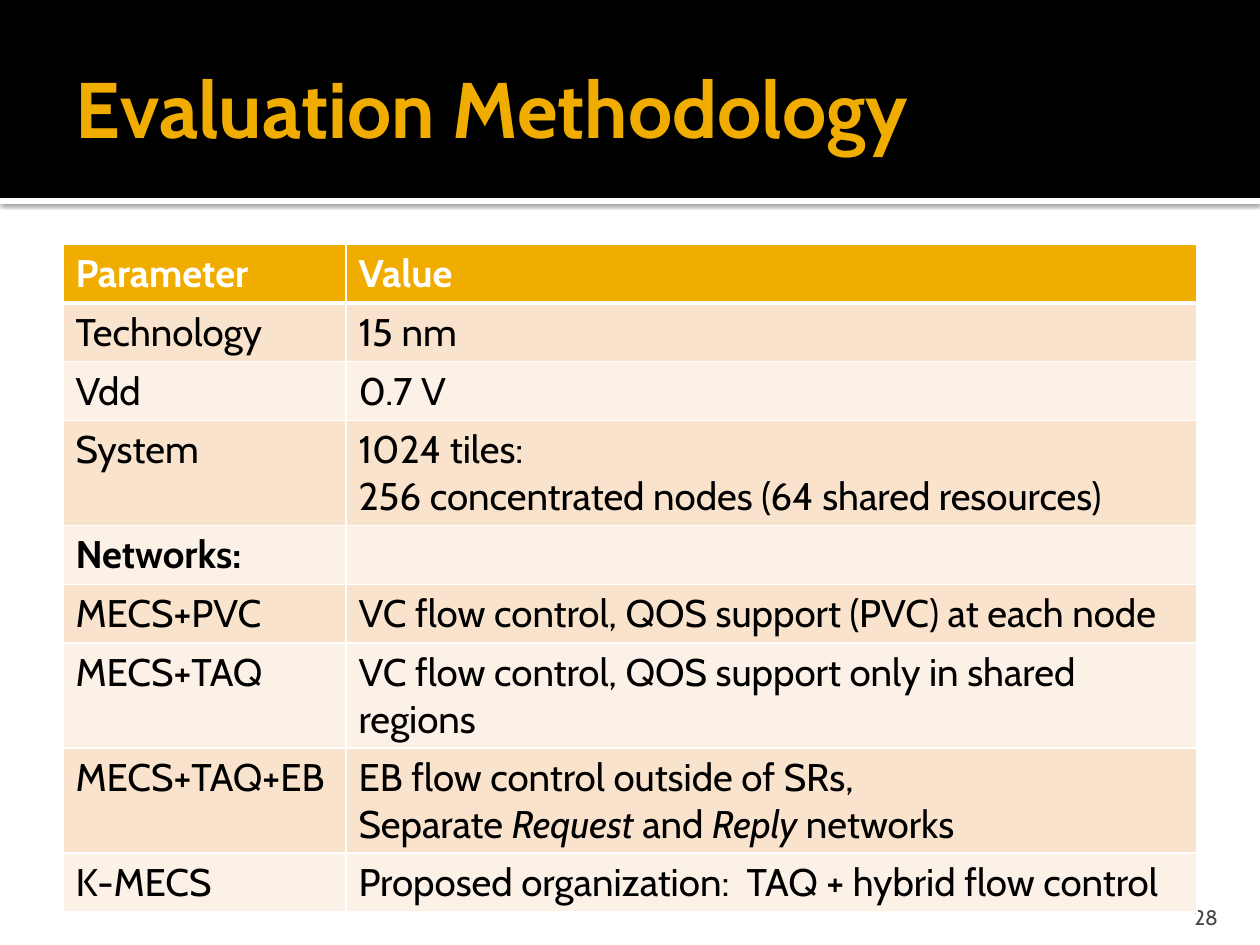
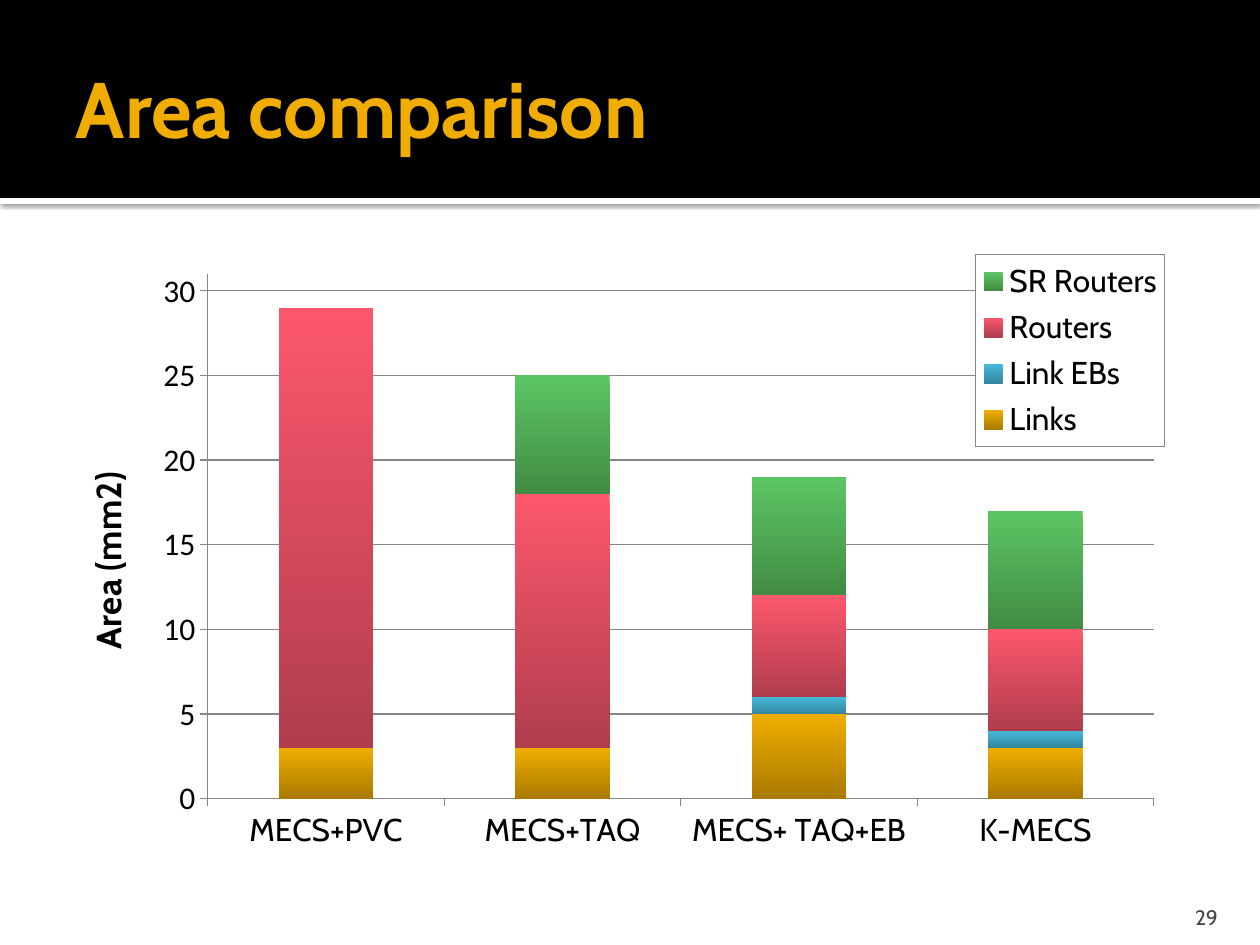
from lxml import etree
from pptx import Presentation
from pptx.chart.data import CategoryChartData
from pptx.dml.color import RGBColor
from pptx.enum.chart import XL_CHART_TYPE as ChartType
from pptx.enum.chart import XL_LEGEND_POSITION as LegendPosition
from pptx.enum.chart import XL_TICK_MARK as TickMark
from pptx.enum.shapes import MSO_SHAPE as Shape
from pptx.enum.text import MSO_ANCHOR as Anchor
from pptx.enum.text import PP_ALIGN as Align
from pptx.oxml import parse_xml
from pptx.oxml.ns import nsdecls, qn
from pptx.util import Pt

PX = 914400 / 126
SLIDE_WIDTH, SLIDE_HEIGHT = 1260, 945
FONT = "Cabin"
GOLD, BLACK, WHITE, GREY = "F0AD00", "000000", "FFFFFF", "454545"
ROW_FILLS = ("FCF1E7", "F9E3CC")
AXIS_GREY = "868686"

# Lines are separated by a line break; *stars* mark italics
PARAMETERS = [
    ("Parameter", "Value"),
    ("Technology", "15 nm"),
    ("Vdd", "0.7 V"),
    ("System", "1024 tiles:\n256 concentrated nodes (64 shared resources)"),
    ("Networks:", ""),
    ("MECS+PVC", "VC flow control, QOS support (PVC) at each node"),
    ("MECS+TAQ", "VC flow control, QOS support only in shared regions"),
    ("MECS+TAQ+EB", "EB flow control outside of SRs,\n"
                    "Separate *Request* and *Reply* networks"),
    ("K-MECS", "Proposed organization:  TAQ + hybrid flow control"),
]
BOLD_CELLS = ("Parameter", "Value", "Networks:")

NETWORKS = ["MECS+PVC", "MECS+TAQ", "MECS+ TAQ+EB", "K-MECS"]
# Series name, areas, gradient from top to bottom
AREAS = [
    ("Links", (3, 3, 5, 3), ("F0AD00", "AA7A00")),
    ("Link EBs", (0, 0, 1, 1), ("45B9DA", "3486A0")),
    ("Routers", (26, 15, 6, 6), ("FC576D", "B03D4D")),
    ("SR Routers", (0, 7, 7, 7), ("5CC563", "428C44")),
]


def px(*lengths):
    return [round(length * PX) for length in lengths]


def rgb(color):
    return RGBColor.from_string(color)


def style_font(font, size, color=BLACK, bold=False, name=FONT):
    font.name, font.size, font.bold = name, Pt(size), bold
    font.color.rgb = rgb(color)


def add_band(slide, box, color):
    band = slide.shapes.add_shape(Shape.RECTANGLE, *px(*box))
    band.shadow.inherit = False
    band.fill.solid()
    band.fill.fore_color.rgb = rgb(color)
    band.line.fill.background()
    return band


def add_text(slide, box, text, size, color, anchor, margins, bold=False, align=Align.LEFT):
    frame = slide.shapes.add_textbox(*px(*box)).text_frame
    frame.word_wrap = True
    frame.vertical_anchor = anchor
    (frame.margin_left, frame.margin_top,
     frame.margin_right, frame.margin_bottom) = px(*margins)
    paragraph = frame.paragraphs[0]
    paragraph.text = text
    paragraph.alignment = align
    style_font(paragraph.font, size, color, bold)


def add_frame(presentation, title, number):
    """Add a slide with the header bands, the title and the slide number."""
    slide = presentation.slides.add_slide(presentation.slide_layouts[6])
    # White rule with a soft shadow under the black header
    rule = add_band(slide, (0, 198, SLIDE_WIDTH, 6), WHITE)
    effects = rule._element.spPr.find(qn("a:effectLst"))
    effects.append(parse_xml(
        f'<a:outerShdw {nsdecls("a")} blurRad="{Pt(2.5)}" dist="{Pt(0.8)}" dir="5400000">'
        f'<a:srgbClr val="{BLACK}"><a:alpha val="60000"/></a:srgbClr></a:outerShdw>'))
    add_band(slide, (0, 0, SLIDE_WIDTH, 198), BLACK)
    add_text(slide, (63, 21, 1134, 173), title, 45, GOLD, Anchor.MIDDLE,
             (13, 6, 6, 6), bold=True)
    add_text(slide, (1130, 892, 101, 38), str(number), 12, GREY, Anchor.BOTTOM,
             (13, 6, 13, 0), align=Align.RIGHT)
    return slide


def set_borders(cell, bottom_width):
    properties = cell._tc.get_or_add_tcPr()
    widths = {"lnL": 1, "lnR": 1, "lnT": 1, "lnB": bottom_width}
    for position, (side, width) in enumerate(widths.items()):
        properties.insert(position, parse_xml(
            f'<a:{side} {nsdecls("a")} w="{Pt(width)}"><a:solidFill>'
            f'<a:srgbClr val="{WHITE}"/></a:solidFill></a:{side}>'))


def fill_cell(cell, text, row):
    cell.fill.solid()
    cell.fill.fore_color.rgb = rgb(ROW_FILLS[row % 2] if row else GOLD)
    set_borders(cell, 1 if row else 3)
    for index, line in enumerate(text.split("\n")):
        frame = cell.text_frame
        paragraph = frame.add_paragraph() if index else frame.paragraphs[0]
        style_font(paragraph.font, 22, BLACK if row else WHITE, text in BOLD_CELLS)
        for part, words in enumerate(line.split("*")):
            if words:
                run = paragraph.add_run()
                run.text = words
                if part % 2:
                    run.font.italic = True


def add_parameter_table(slide, box):
    left, top, width, row_height = box
    count = len(PARAMETERS)
    table = slide.shapes.add_table(
        count, 2, *px(left, top, width, row_height * count)).table
    table.columns[0].width, table.columns[1].width = px(width // 4, width - width // 4)
    for row, texts in enumerate(PARAMETERS):
        table.rows[row].height = px(row_height)[0]
        for column, text in enumerate(texts):
            fill_cell(table.cell(row, column), text, row)


def make_layout(x, y, width, height, inner=False):
    """Return a manual chart layout, in fractions of the chart."""
    target = '<c:layoutTarget val="inner"/>' if inner else ""
    values = "".join(f'<c:{tag} val="{value}"/>' for tag, value in
                     zip("xywh", (x, y, width, height)))
    return parse_xml(
        f'<c:layout {nsdecls("c")}><c:manualLayout>{target}<c:xMode val="edge"/>'
        f'<c:yMode val="edge"/>{values}</c:manualLayout></c:layout>')


def style_axes(chart):
    value_axis, category_axis = chart.value_axis, chart.category_axis
    for axis, font_name in ((value_axis, "Calibri"), (category_axis, FONT)):
        axis.major_tick_mark = TickMark.OUTSIDE
        axis.minor_tick_mark = TickMark.NONE
        axis.format.line.color.rgb = rgb(AXIS_GREY)
        style_font(axis.tick_labels.font, 18, name=font_name)
    value_axis.minimum_scale, value_axis.maximum_scale = 0, 31
    value_axis.major_unit = 5
    value_axis.has_major_gridlines = True
    value_axis.major_gridlines.format.line.color.rgb = rgb(AXIS_GREY)
    value_axis.tick_labels.number_format = "0"
    value_axis.tick_labels.number_format_is_linked = False
    # Upright axis title
    frame = value_axis.axis_title.text_frame
    frame.text = "Area (mm2)"
    style_font(frame.paragraphs[0].font, 20, bold=True)
    body = value_axis._element.find(".//" + qn("a:bodyPr"))
    body.set("rot", "-5400000")
    body.set("vert", "horz")


def style_legend(chart):
    chart.has_legend = True
    legend = chart.legend
    legend.position = LegendPosition.RIGHT
    legend.include_in_layout = True
    style_font(legend.font, 18)
    element = legend._element
    for layout in element.findall(qn("c:layout")):
        element.remove(layout)
    element.find(qn("c:legendPos")).addnext(make_layout(0.82, 0.02, 0.17, 0.3))
    element.find(qn("c:overlay")).addnext(parse_xml(
        f'<c:spPr {nsdecls("c", "a")}><a:solidFill><a:srgbClr val="{WHITE}"/></a:solidFill>'
        f'<a:ln><a:solidFill><a:srgbClr val="{AXIS_GREY}"/></a:solidFill></a:ln></c:spPr>'))


def add_area_chart(slide, box):
    data = CategoryChartData(number_format="0")
    data.categories = NETWORKS
    for name, values, _ in AREAS:
        data.add_series(name, values)
    chart = slide.shapes.add_chart(ChartType.COLUMN_STACKED, *px(*box), data).chart
    chart.has_title = False
    style_font(chart.font, 18)
    plot = chart.plots[0]
    plot.gap_width, plot.overlap = 150, 100
    plot.vary_by_categories = False
    for series, (_, _, colors) in zip(plot.series, AREAS):
        fill = series.format.fill
        fill.gradient()
        fill.gradient_angle = 270
        for stop, color in zip(fill.gradient_stops, colors):
            stop.color.rgb = rgb(color)
    style_axes(chart)
    style_legend(chart)
    # Fixed plot area
    plot_area = chart.element.find(".//" + qn("c:plotArea"))
    for layout in plot_area.findall(qn("c:layout")):
        plot_area.remove(layout)
    plot_area.insert(0, make_layout(0.13, 0.05, 0.85, 0.82, inner=True))


def main():
    presentation = Presentation()
    presentation.slide_width, presentation.slide_height = px(SLIDE_WIDTH, SLIDE_HEIGHT)
    methodology = add_frame(presentation, "Evaluation Methodology", 28)
    add_parameter_table(methodology, (63, 244, 1134, 52))
    comparison = add_frame(presentation, "Area comparison", 29)
    add_area_chart(comparison, (63, 242, 1113, 640))
    presentation.save("out.pptx")


if __name__ == "__main__":
    main()
